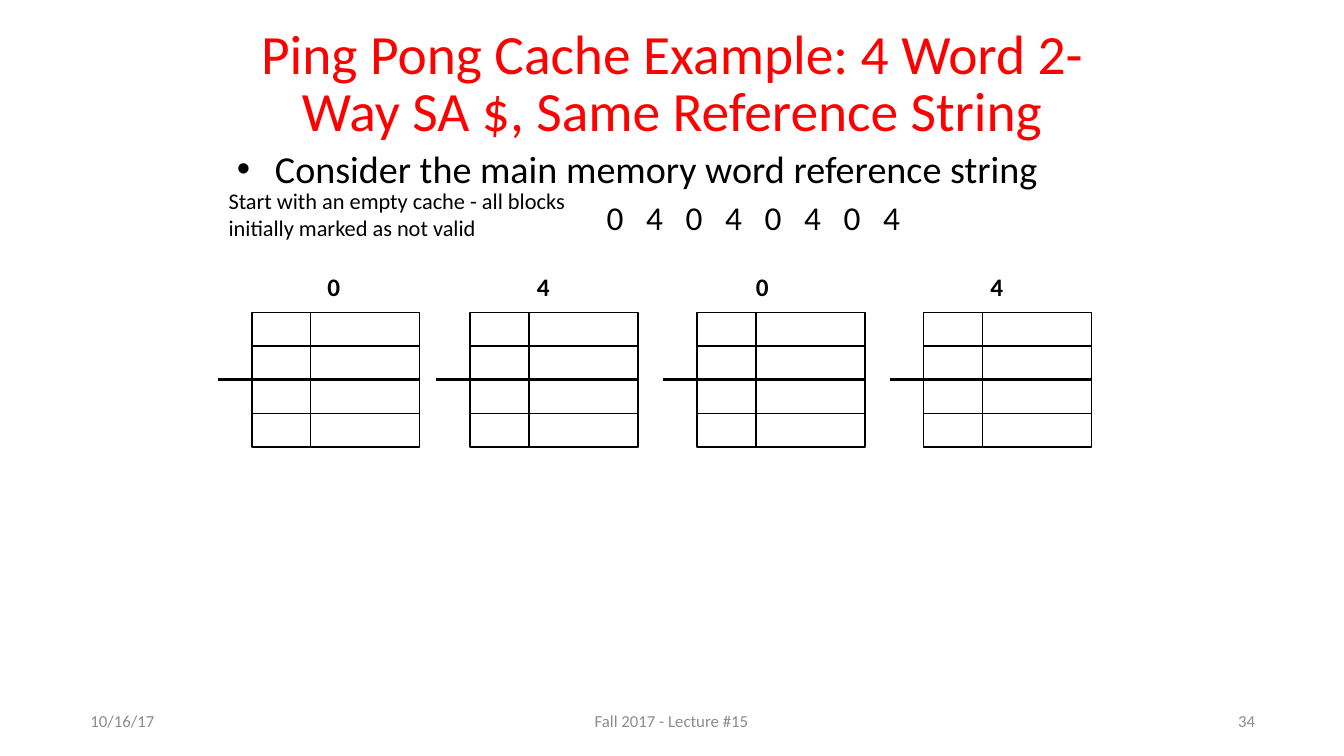
from dataclasses import dataclass

from lxml.etree import SubElement
from pptx import Presentation
from pptx.dml.color import RGBColor as RGB
from pptx.enum.shapes import MSO_CONNECTOR as CONN, MSO_SHAPE as SHAPE
from pptx.enum.text import MSO_ANCHOR as ANCHOR, PP_ALIGN as ALIGN
from pptx.oxml.ns import qn
from pptx.util import Cm, Pt


@dataclass(frozen=True)
class Theme:
    font: str = "Calibri"
    title_color: RGB = RGB(0xFF, 0, 0)
    ink: RGB = RGB(0, 0, 0)
    muted: RGB = RGB(0x8C, 0x8C, 0x8C)
    title: float = 39.6
    bullet: float = 27.2
    digits: float = 23.8
    label: float = 18
    note: float = 16
    footer: float = 12
    thin: float = 1
    thick: float = 2.25


class SlideBuilder:
    def __init__(self, prs, theme):
        self.theme = theme
        self.slide = prs.slides.add_slide(prs.slide_layouts[6])

    def box(self, left, top, width, height, anchor=ANCHOR.TOP, wrap=True):
        sp = self.slide.shapes.add_textbox(Cm(left), Cm(top), Cm(width), Cm(height))
        tf = sp.text_frame
        tf.word_wrap = wrap
        tf.vertical_anchor = anchor
        return tf

    def text(self, tf, text, size, color=None, bold=False, align=ALIGN.LEFT,
             line_spacing=None, before=0, indent=0, hanging=0, bullet=None, tracking=0):
        """Fill the first empty paragraph of tf, or append one; tracking is in points."""
        p = tf.add_paragraph() if tf.text else tf.paragraphs[0]
        p.alignment = align
        p.space_before = Pt(before)
        if line_spacing:
            p.line_spacing = line_spacing
        pPr = p._p.get_or_add_pPr()
        pPr.set("marL", str(Cm(indent)))
        pPr.set("indent", str(Cm(-hanging)))
        if bullet:
            SubElement(pPr, qn("a:buFont")).set("typeface", "Arial")
            SubElement(pPr, qn("a:buChar")).set("char", bullet)
        r = p.add_run()
        r.text = text
        r.font.name = self.theme.font
        r.font.size = Pt(size)
        r.font.bold = bold
        r.font.color.rgb = color or self.theme.ink
        if tracking:
            r._r.get_or_add_rPr().set("spc", str(round(tracking * 100)))

    def rule(self, shapes, left, right, y, weight):
        line = shapes.add_connector(CONN.STRAIGHT, Cm(left), Cm(y), Cm(right), Cm(y))
        line.line.color.rgb = self.theme.ink
        line.line.width = Pt(weight)
        SubElement(line._element.spPr, qn("a:effectLst"))

    def column(self, left, top, width, row_height, rows):
        """Draw one outlined cache column, split into rows and grouped."""
        shapes = self.slide.shapes.add_group_shape().shapes
        sp = shapes.add_shape(SHAPE.RECTANGLE, Cm(left), Cm(top),
                              Cm(width), Cm(row_height * rows))
        sp.shadow.inherit = False
        sp.fill.background()
        sp.line.color.rgb = self.theme.ink
        sp.line.width = Pt(self.theme.thin)
        for row in range(1, rows):
            self.rule(shapes, left, left + width, top + row * row_height, self.theme.thin)


def add_caches(s):
    top, row_height, rows = 7.87, 0.85, 4
    tag_width, data_width, overhang = 1.48, 2.75, 0.85
    caches = [("0", 6.35, 8.0), ("4", 11.85, 13.28), ("0", 17.57, 18.8), ("4", 23.28, 24.71)]
    for word, left, label_left in caches:
        data_left = left + tag_width
        s.column(data_left, top, data_width, row_height, rows)
        s.column(left, top, tag_width, row_height, rows)
        s.rule(s.slide.shapes, left - overhang, data_left + data_width,
               top + row_height * rows / 2, s.theme.thick)
        s.text(s.box(label_left, 6.7, 0.86, 1.02, wrap=False), word, s.theme.label, bold=True)


def add_footer(s):
    footers = [
        ("10/16/17", 2.03, 5.92, ALIGN.LEFT),
        ("Fall 2017 - Lecture #15", 12.9, 8.05, ALIGN.CENTER),
        ("34", 25.96, 5.92, ALIGN.RIGHT),
    ]
    for text, left, width, align in footers:
        s.text(s.box(left, 17.65, width, 1.02, ANCHOR.MIDDLE), text,
               s.theme.footer, s.theme.muted, align=align)


def main():
    prs = Presentation()
    prs.slide_width, prs.slide_height = Cm(33.87), Cm(19.05)
    theme = Theme()
    s = SlideBuilder(prs, theme)

    s.text(s.box(5.51, 0.58, 22.86, 3.18, ANCHOR.MIDDLE),
           "Ping Pong Cache Example: 4 Word 2-Way SA $, Same Reference String",
           theme.title, theme.title_color, align=ALIGN.CENTER, line_spacing=0.85)
    add_caches(s)
    body = s.box(5.72, 3.53, 22.66, 2.26)
    s.text(body, "Consider the main memory word reference string", theme.bullet,
           indent=0.96, hanging=0.96, bullet="•")
    s.text(body, "0 4 0 4 0 4 0 4", theme.digits, before=4.8, indent=9.32, tracking=5.4)
    s.text(s.box(5.51, 4.6, 9.53, 1.63),
           "Start with an empty cache - all blocks initially marked as not valid", theme.note)
    add_footer(s)
    prs.save("out.pptx")


if __name__ == "__main__":
    main()
